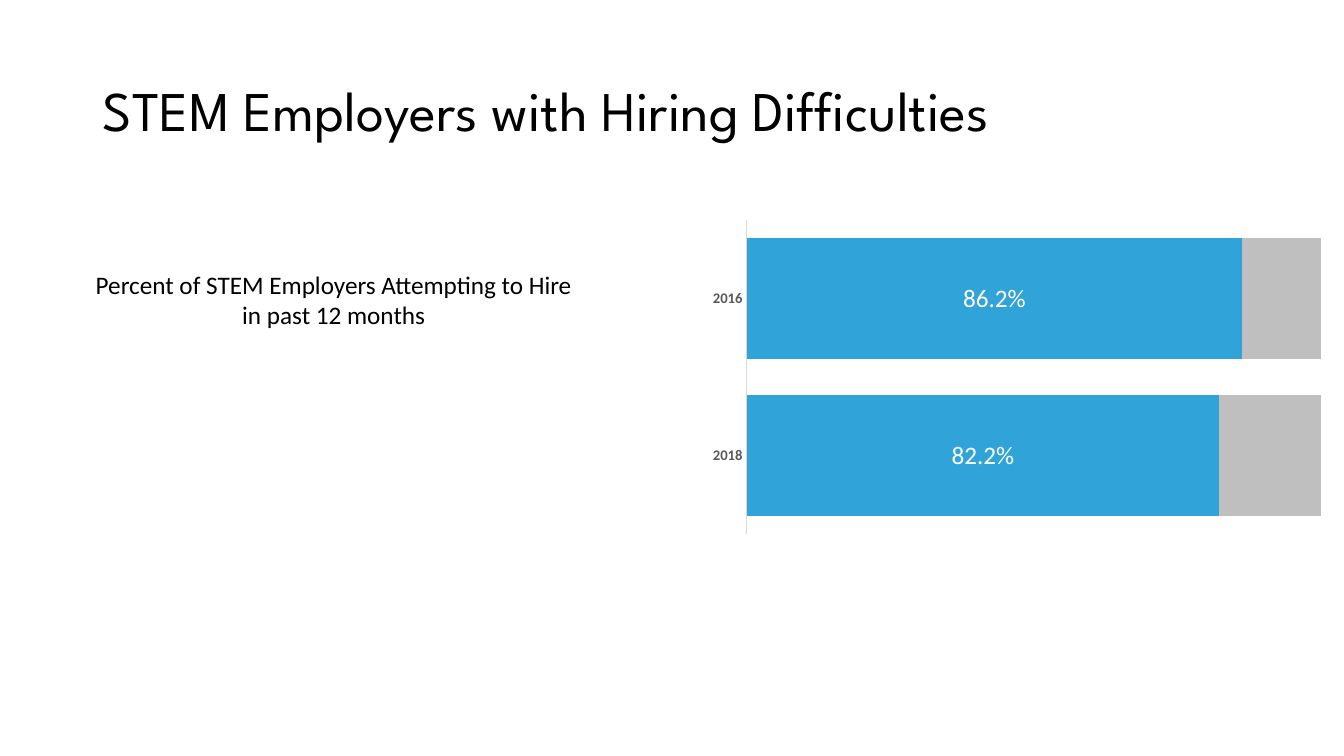
from dataclasses import dataclass

from lxml import etree
from pptx import Presentation
from pptx.chart.data import CategoryChartData
from pptx.dml.color import RGBColor as RGB
from pptx.enum.chart import XL_CHART_TYPE as ChartType
from pptx.enum.chart import XL_LABEL_POSITION as LabelPos
from pptx.enum.chart import XL_TICK_LABEL_POSITION as TickLabel
from pptx.enum.chart import XL_TICK_MARK as Tick
from pptx.enum.text import MSO_ANCHOR as Anchor
from pptx.enum.text import PP_ALIGN as Align
from pptx.oxml.ns import qn
from pptx.util import Inches, Pt


@dataclass(frozen=True)
class Theme:
    title_font: str = "League Spartan"
    body_font: str = "Calibri"
    title_size: float = 40
    body_size: float = 18
    axis_size: float = 10.5
    chart_size: float = 10
    text: RGB = RGB.from_string("000000")
    axis_text: RGB = RGB.from_string("595959")
    axis_line: RGB = RGB.from_string("D9D9D9")
    hiring: RGB = RGB.from_string("30A3D9")
    rest: RGB = RGB.from_string("BFBFBF")
    label: RGB = RGB.from_string("FFFFFF")


T = Theme()


def style(font, name, size, color, bold=False):
    font.name = name
    font.size = Pt(size)
    font.bold = bold
    font.color.rgb = color


prs = Presentation()
prs.slide_width, prs.slide_height = Inches(13.33), Inches(7.5)
s = prs.slides.add_slide(prs.slide_layouts[5])

# Title
title = s.shapes.title
title.left, title.top = Inches(0.92), Inches(0.4)
title.width, title.height = Inches(11.5), Inches(1.45)
tf = title.text_frame
tf.vertical_anchor = Anchor.MIDDLE
p = tf.paragraphs[0]
p.alignment = Align.LEFT
p.line_spacing = 0.9
r = p.add_run()
r.text = "STEM Employers with Hiring Difficulties"
style(r.font, T.title_font, T.title_size, T.text)

# Chart caption
caption = s.shapes.add_textbox(Inches(0.44), Inches(2.62), Inches(5.74), Inches(0.71))
tf = caption.text_frame
tf.word_wrap = True
lines = ["Percent of STEM Employers Attempting to Hire", "in past 12 months"]
for i, line in enumerate(lines):
    p = tf.add_paragraph() if i else tf.paragraphs[0]
    p.alignment = Align.CENTER
    r = p.add_run()
    r.text = line
    style(r.font, T.body_font, T.body_size, T.text)

# Stacked bar chart
data = CategoryChartData(number_format="0.0%")
data.categories = ["2018", "2016"]
data.add_series("Series 1", [0.822, 0.862])
data.add_series("Series 2", [0.18, 0.14])
chart = s.shapes.add_chart(ChartType.BAR_STACKED, Inches(6.66), Inches(2.17),
                           Inches(6.48), Inches(3.13), data).chart
chart.has_title = False
chart.has_legend = False
style(chart.font, T.body_font, T.chart_size, T.text)

plot = chart.plots[0]
plot.gap_width, plot.overlap = 30, 100
plot.vary_by_categories = False
for series, color in zip(plot.series, [T.hiring, T.rest]):
    series.format.fill.solid()
    series.format.fill.fore_color.rgb = color

labels = plot.series[0].data_labels
labels.show_value = True
labels.number_format, labels.number_format_is_linked = "0.0%", False
labels.position = LabelPos.CENTER
style(labels.font, T.body_font, T.body_size, T.label)

# Axes
years = chart.category_axis
years.major_tick_mark = years.minor_tick_mark = Tick.NONE
years.tick_label_position = TickLabel.NEXT_TO_AXIS
years.has_major_gridlines = False
years.format.line.color.rgb = T.axis_line
years.format.line.width = Pt(0.75)
style(years.tick_labels.font, T.body_font, T.axis_size, T.axis_text, bold=True)

share = chart.value_axis
share.minimum_scale, share.maximum_scale = 0, 1
share.has_major_gridlines = False
share.visible = False

# Inner plot area as fractions of the chart frame
area = chart._chartSpace.chart.plotArea
for old in area.findall(qn("c:layout")):
    area.remove(old)
layout = etree.Element(qn("c:layout"))
manual = etree.SubElement(layout, qn("c:manualLayout"))
settings = [("layoutTarget", "inner"), ("xMode", "edge"), ("yMode", "edge"),
            ("x", 0.115), ("y", 0.005), ("w", 0.88), ("h", 0.995)]
for name, value in settings:
    etree.SubElement(manual, qn(f"c:{name}")).set("val", str(value))
area.insert(0, layout)

prs.save("out.pptx")
